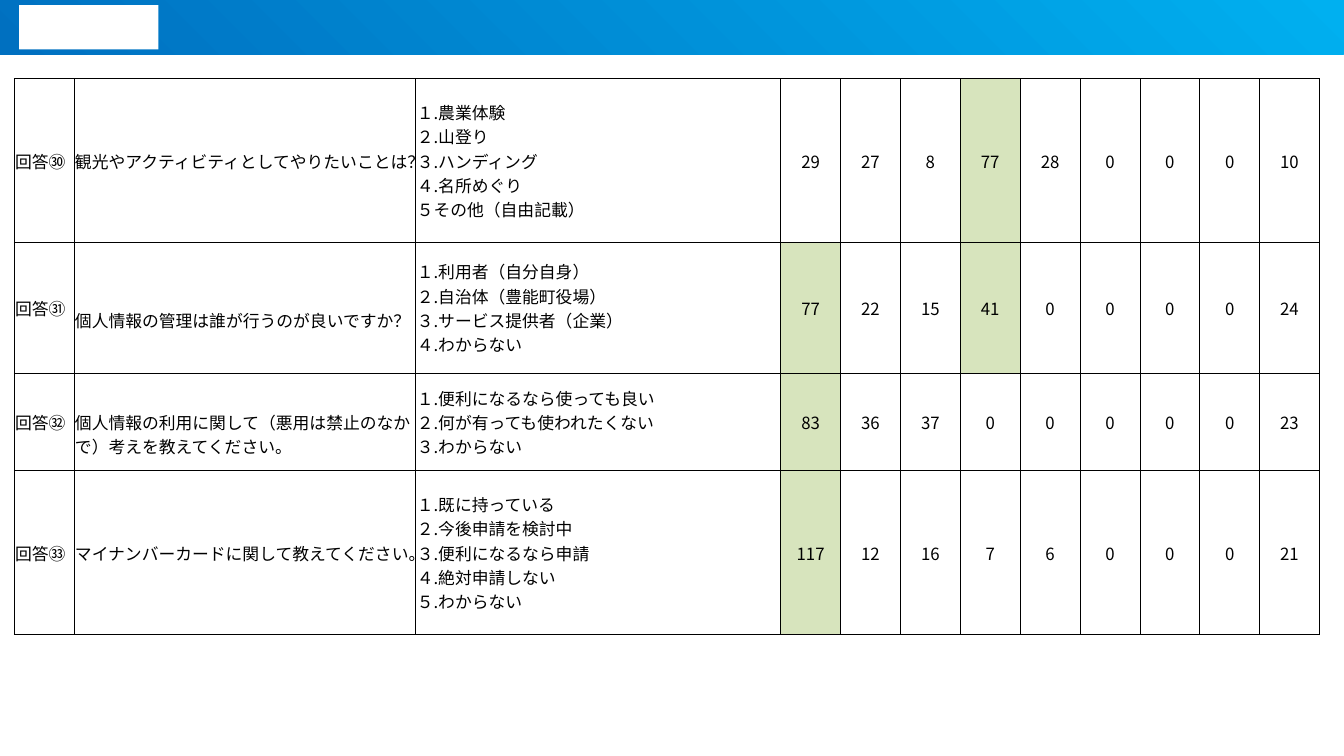
from dataclasses import dataclass

from lxml.etree import SubElement
from pptx import Presentation
from pptx.dml.color import RGBColor as RGB
from pptx.enum.shapes import MSO_SHAPE as SHAPE
from pptx.enum.text import MSO_ANCHOR as ANCHOR, PP_ALIGN as ALIGN
from pptx.oxml.ns import qn
from pptx.util import Inches, Pt


@dataclass(frozen=True)
class Theme:
    font: str = "Noto Sans CJK JP"
    size: float = 12
    ink: str = "000000"
    paper: str = "FFFFFF"
    top_answer: str = "D7E4BD"
    band_light: str = "00B0F0"
    band_dark: str = "0070C0"
    border: float = 0.5


THEME = Theme()
SLIDE_W, SLIDE_H = 13.33, 7.5
TABLE_X, TABLE_Y, TABLE_W = 0.14, 0.78, 12.95
QUESTION_W, OPTIONS_W, COUNTS = 3.39, 3.62, 9
NARROW_W = (TABLE_W - QUESTION_W - OPTIONS_W) / (COUNTS + 1)
ROW_HEIGHTS = [1.62, 1.3, 0.97, 1.62]
LINE_H = 0.24

# label, question, lines the question is lowered, options, counts, highlighted counts
ANSWERS = [
    ("回答㉚", "観光やアクティビティとしてやりたいことは？", 0,
     ["１.農業体験", "２.山登り", "３.ハンディング", "４.名所めぐり", "５その他（自由記載）"],
     [29, 27, 8, 77, 28, 0, 0, 0, 10], {3}),
    ("回答㉛", "個人情報の管理は誰が行うのが良いですか？", 1,
     ["１.利用者（自分自身）", "２.自治体（豊能町役場）", "３.サービス提供者（企業）", "４.わからない"],
     [77, 22, 15, 41, 0, 0, 0, 0, 24], {0, 3}),
    ("回答㉜", "個人情報の利用に関して（悪用は禁止のなかで）考えを教えてください。", 1,
     ["１.便利になるなら使っても良い", "２.何が有っても使われたくない", "３.わからない"],
     [83, 36, 37, 0, 0, 0, 0, 0, 23], {0}),
    ("回答㉝", "マイナンバーカードに関して教えてください。", 0,
     ["１.既に持っている", "２.今後申請を検討中", "３.便利になるなら申請", "４.絶対申請しない", "５.わからない"],
     [117, 12, 16, 7, 6, 0, 0, 0, 21], {0}),
]


def add_rect(s, x, y, w, h):
    sp = s.shapes.add_shape(SHAPE.RECTANGLE, *map(Inches, (x, y, w, h)))
    sp.shadow.inherit = False
    sp.line.fill.background()
    return sp


def add_header(s):
    band = add_rect(s, 0, 0, SLIDE_W, 0.54)
    band.fill.gradient()
    band.fill.gradient_angle = 225
    for stop, color in zip(band.fill.gradient_stops, (THEME.band_light, THEME.band_dark)):
        stop.color.rgb = RGB.from_string(color)
    plate = add_rect(s, 0.19, 0.05, 1.38, 0.44)
    plate.fill.solid()
    plate.fill.fore_color.rgb = RGB.from_string(THEME.paper)


def add_borders(cell):
    tc_pr = cell._tc.get_or_add_tcPr()
    for side in ("lnL", "lnR", "lnT", "lnB"):
        ln = SubElement(tc_pr, qn(f"a:{side}"), w=str(Pt(THEME.border)))
        fill = SubElement(ln, qn("a:solidFill"))
        SubElement(fill, qn("a:srgbClr"), val=THEME.ink)


def write_paragraph(p, text, align):
    p.alignment = align
    r = p.add_run()
    r.text = text
    for name, value in {"name": THEME.font, "size": Pt(THEME.size)}.items():
        setattr(r.font, name, value)
    r.font.color.rgb = RGB.from_string(THEME.ink)
    SubElement(r._r.get_or_add_rPr(), qn("a:ea"), typeface=THEME.font)


def fill_cell(cell, lines, align=ALIGN.LEFT, color=None, lowered=0):
    layout = {
        "margin_left": Inches(0.01),
        "margin_right": Inches(0.01),
        "margin_top": Inches(0.01 + lowered * LINE_H),
        "margin_bottom": 0,
        "vertical_anchor": ANCHOR.MIDDLE,
    }
    for name, value in layout.items():
        setattr(cell, name, value)
    add_borders(cell)
    if color:
        cell.fill.solid()
        cell.fill.fore_color.rgb = RGB.from_string(color)
    else:
        cell.fill.background()
    tf = cell.text_frame
    for i, line in enumerate(lines):
        write_paragraph(tf.add_paragraph() if i else tf.paragraphs[0], line, align)


def add_answer_table(s):
    widths = [NARROW_W, QUESTION_W, OPTIONS_W] + [NARROW_W] * COUNTS
    frame = s.shapes.add_table(len(ANSWERS), len(widths), Inches(TABLE_X), Inches(TABLE_Y),
                               Inches(TABLE_W), Inches(sum(ROW_HEIGHTS)))
    table = frame.table
    table.first_row = table.horz_banding = False
    for column, width in zip(table.columns, widths):
        column.width = Inches(width)
    for row, height, answer in zip(table.rows, ROW_HEIGHTS, ANSWERS):
        row.height = Inches(height)
        label, question, lowered, options, counts, highlighted = answer
        cells = list(row.cells)
        fill_cell(cells[0], [label])
        fill_cell(cells[1], [question], lowered=lowered)
        fill_cell(cells[2], options)
        for i, count in enumerate(counts):
            color = THEME.top_answer if i in highlighted else None
            fill_cell(cells[3 + i], [str(count)], ALIGN.CENTER, color)


def main():
    prs = Presentation()
    prs.slide_width, prs.slide_height = Inches(SLIDE_W), Inches(SLIDE_H)
    s = prs.slides.add_slide(prs.slide_layouts[6])
    add_header(s)
    add_answer_table(s)
    prs.save("out.pptx")


if __name__ == "__main__":
    main()
